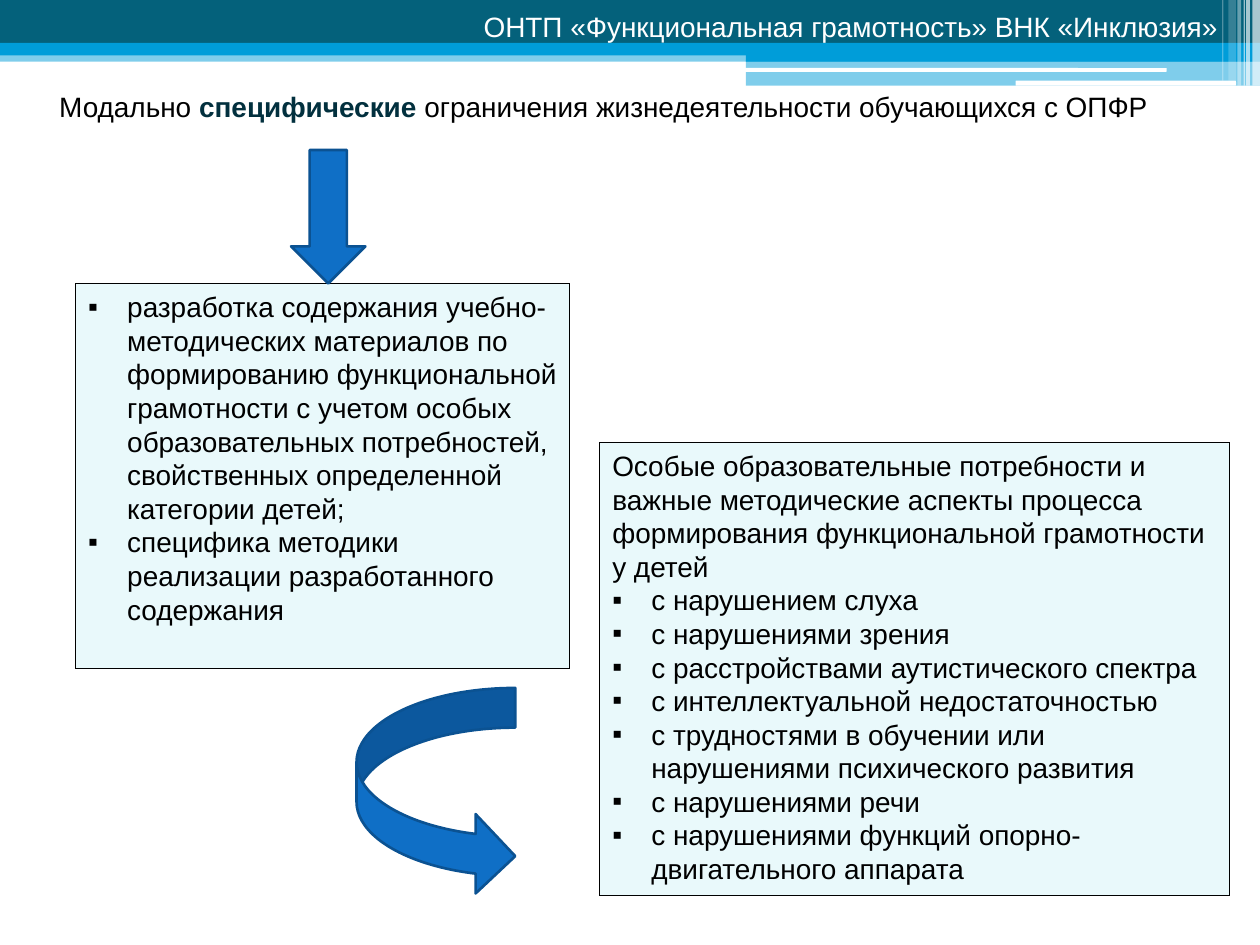
"""Build a slide on specific limitations of learners and their educational needs."""
from dataclasses import dataclass

import lxml.etree
import pptx
import pptx.dml.color
import pptx.enum.shapes
import pptx.enum.text
import pptx.oxml.ns
import pptx.util

SHAPES = pptx.enum.shapes.MSO_SHAPE
PX = 9144


@dataclass(frozen=True)
class Theme:
    """Colours, font and type sizes of the slide."""
    font: str = "Arial"
    text_size: int = 16
    wide_size: int = 18
    text: str = "000000"
    accent: str = "02303E"
    white: str = "FFFFFF"
    teal: str = "04617B"
    sky: str = "009DD9"
    panel: str = "E9F9FB"
    arrow: str = "0F6FC6"
    arrow_edge: str = "0B5292"


def rgb(value):
    """Turn a hex string into a colour."""
    return pptx.dml.color.RGBColor.from_string(value)


def add_xml(parent, tag, **attributes):
    """Append a namespaced element with the given attributes."""
    return lxml.etree.SubElement(parent, pptx.oxml.ns.qn(tag), attributes)


def write(para, text, *, theme, size=None, color=None, bold=False):
    """Add a formatted span of text to a paragraph."""
    span = para.add_run()
    span.text = text
    span.font.name = theme.font
    span.font.size = pptx.util.Pt(size or theme.text_size)
    span.font.bold = bold
    span.font.color.rgb = rgb(color or theme.text)


class SlideBuilder:
    """Hold the theme and the current page, and draw elements on it."""

    def __init__(self, page, theme):
        self.page = page
        self.theme = theme

    def place(self, box, left, top, width, height):
        """Move and size a box given in px."""
        box.left, box.top = left * PX, top * PX
        box.width, box.height = width * PX, height * PX

    def prepare(self, box):
        """Set wrapping and top anchoring, and return the text frame."""
        frame = box.text_frame
        frame.word_wrap = True
        frame.auto_size = pptx.enum.text.MSO_AUTO_SIZE.NONE
        frame.vertical_anchor = pptx.enum.text.MSO_ANCHOR.TOP
        return frame

    def shape(self, kind, area, fill, opacity=100, edge=None):
        """Draw a filled preset shape."""
        shape = self.page.shapes.add_shape(kind, *(value * PX for value in area))
        shape.shadow.inherit = False
        shape.fill.solid()
        shape.fill.fore_color.rgb = rgb(fill)
        if opacity < 100:
            color = shape.element.spPr.find(".//" + pptx.oxml.ns.qn("a:srgbClr"))
            add_xml(color, "a:alpha", val=str(opacity * 1000))
        if edge:
            shape.line.color.rgb = rgb(edge)
            shape.line.width = pptx.util.Pt(1.5)
        else:
            shape.line.fill.background()
        return shape

    def header(self, area, text):
        """Write the running header."""
        box = self.page.shapes.add_textbox(*(value * PX for value in area))
        para = self.prepare(box).paragraphs[0]
        write(para, text, theme=self.theme, color=self.theme.white)

    def title(self, area, spans):
        """Fill the title placeholder with (text, format) spans."""
        box = self.page.shapes.title
        self.place(box, *area)
        para = self.prepare(box).paragraphs[0]
        para.alignment = pptx.enum.text.PP_ALIGN.LEFT
        for text, style in spans:
            write(para, text, theme=self.theme, **style)

    def panel(self, index, area, items, intro=None):
        """Fill a body placeholder with an optional intro and a bulleted list."""
        box = self.page.placeholders[index]
        self.place(box, *area)
        box.fill.solid()
        box.fill.fore_color.rgb = rgb(self.theme.panel)
        box.line.color.rgb = rgb(self.theme.text)
        box.line.width = 0
        frame = self.prepare(box)
        lines = ([(intro, False)] if intro else []) + [(item, True) for item in items]
        for number, (text, bulleted) in enumerate(lines):
            para = frame.add_paragraph() if number else frame.paragraphs[0]
            para.space_before = pptx.util.Pt(0)
            self.bullet(para, bulleted)
            write(para, text, theme=self.theme)

    def bullet(self, para, shown):
        """Set the indent and the square bullet of a paragraph."""
        indent = 31 * PX if shown else 0
        settings = para._p.get_or_add_pPr()
        settings.set("marL", str(indent))
        settings.set("indent", str(-indent))
        if shown:
            add_xml(settings, "a:buFont", typeface=self.theme.font)
            add_xml(settings, "a:buChar", char="▪")
        else:
            add_xml(settings, "a:buNone")


def main():
    """Build and save the deck."""
    theme = Theme()
    deck = pptx.Presentation()
    deck.slide_width, deck.slide_height = 1000 * PX, 750 * PX
    builder = SlideBuilder(deck.slides.add_slide(deck.slide_layouts[3]), theme)

    bands = [
        ((0, 40, 1000, 9), theme.sky, 50),
        ((0, 0, 1000, 34), theme.teal, 100),
        ((0, 34, 1000, 10), theme.sky, 100),
        ((592, 39, 408, 10), theme.sky, 100),
        ((592, 48, 408, 20), theme.sky, 50),
    ]
    for area, fill, opacity in bands:
        builder.shape(SHAPES.RECTANGLE, area, fill, opacity)
    for area in [(591, 54, 335, 3), (806, 64, 175, 4)]:
        builder.shape(SHAPES.ROUNDED_RECTANGLE, area, theme.white)
    stripes = [(994, 6, 68, 65), (989, 3, 68, 65), (987, 1, 68, 60),
               (982, 3, 68, 40), (975, 6, 64, 20), (970, 1, 64, 30)]
    for left, width, height, opacity in stripes:
        builder.shape(SHAPES.RECTANGLE, (left, 0, width, height), theme.white, opacity)

    builder.header((374, 3, 617, 37), "ОНТП «Функциональная грамотность» ВНК «Инклюзия»")
    builder.title((37, 63, 913, 40), [
        ("Модально ", {}),
        ("специфические ", {"color": theme.accent, "bold": True}),
        ("ограничения жизнедеятельности обучающихся с ОПФР", {}),
        (" ", {"size": theme.wide_size}),
    ])
    builder.panel(1, (60, 225, 392, 306), [
        "разработка содержания учебно-методических материалов по формированию "
        "функциональной грамотности с учетом особых образовательных потребностей, "
        "свойственных определенной категории детей;",
        "специфика методики реализации разработанного содержания",
    ])
    builder.panel(2, (476, 351, 500, 360), [
        "с нарушением слуха",
        "с нарушениями зрения",
        "с расстройствами аутистического спектра",
        "с интеллектуальной недостаточностью",
        "с трудностями в обучении или нарушениями психического развития",
        "с нарушениями речи",
        "с нарушениями функций опорно-двигательного аппарата",
    ], intro="Особые образовательные потребности и важные методические аспекты "
             "процесса формирования функциональной грамотности у детей")

    down = builder.shape(SHAPES.UP_ARROW, (231, 119, 59, 106), theme.arrow,
                         edge=theme.arrow_edge)
    down.rotation = 180
    builder.shape(SHAPES.CURVED_RIGHT_ARROW, (283, 546, 126, 165), theme.arrow,
                  edge=theme.arrow_edge)
    deck.save("out.pptx")


if __name__ == "__main__":
    main()
